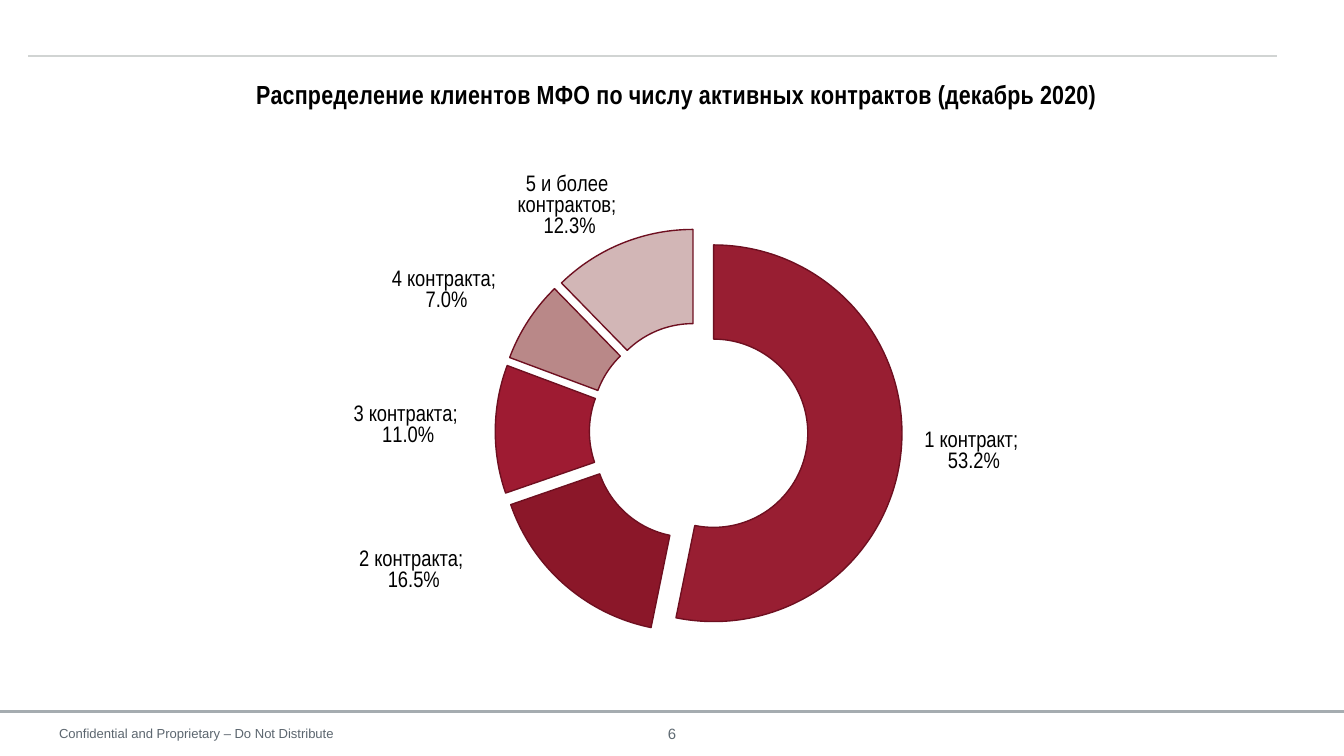
from dataclasses import dataclass

from lxml import etree
from pptx import Presentation
from pptx import util as u
from pptx.chart.data import CategoryChartData
from pptx.dml.color import RGBColor
from pptx.enum import chart as ch, shapes, text
from pptx.oxml import parse_xml
from pptx.oxml.ns import nsdecls, qn


@dataclass(frozen=True)
class Theme:
    font: str = "Arial"
    narrow: str = "Arial Narrow"
    ink: str = "000000"
    paper: str = "FFFFFF"
    footer: str = "5C666F"
    number: str = "5F6A72"
    top_rule: str = "D1D4D3"
    bottom_rule: str = "A5ACB0"
    outline: str = "6E0F20"
    title_size: float = 14
    label_size: float = 12
    number_size: float = 8
    footer_size: float = 7


T = Theme()
W = u.Inches(10)
H = W * 9 // 16

SLICES = [
    ("1 контракт", 0.532, "981E32", (0.108, 0.007)),
    ("2 контракта", 0.165, "8B1729", (-0.17, 0.037)),
    ("3 контракта", 0.11, "9E1B32", (-0.126, -0.007)),
    ("4 контракта", 0.07, "B98888", (-0.114, -0.096)),
    ("5 и более контрактов", 0.123, "D2B6B6", (-0.067, -0.139)),
]


def rgb(value):
    return RGBColor.from_string(value)


def box(left, top, width, height):
    return round(left * W), round(top * H), round(width * W), round(height * H)


def style(font, name, size, color, bold=False):
    font.name, font.size, font.bold = name, u.Pt(size), bold
    font.color.rgb = rgb(color)


def add_rule(s, x1, x2, y, color, width):
    sp = s.shapes.add_connector(
        shapes.MSO_CONNECTOR.STRAIGHT, *box(x1, y, x2, y))
    sp.line.color.rgb = rgb(color)
    sp.line.width = u.Pt(width)
    etree.SubElement(sp._element.spPr, qn("a:effectLst"))


def add_text(s, place, words, size, color, align, anchor, wrap=True):
    sp = s.shapes.add_textbox(*box(*place))
    tf = sp.text_frame
    tf.word_wrap = wrap
    tf.vertical_anchor = anchor
    tf.margin_left = tf.margin_right = tf.margin_top = tf.margin_bottom = 0
    p = tf.paragraphs[0]
    p.text = words
    p.alignment = align
    style(p.font, T.font, size, color)
    return sp


def set_layout(parent, position, x, y, extra="", modes=""):
    for old in parent.findall(qn("c:layout")):
        parent.remove(old)
    parent.insert(position, parse_xml(
        f'<c:layout {nsdecls("c")}><c:manualLayout>{modes}'
        f'<c:x val="{x}"/><c:y val="{y}"/>{extra}'
        '</c:manualLayout></c:layout>'))


EDGES = '<c:xMode val="edge"/><c:yMode val="edge"/>'


def add_labels(ser):
    labels = ser.data_labels
    labels.show_value = labels.show_category_name = True
    labels.number_format = "0.0%"
    labels.number_format_is_linked = False
    style(labels.font, T.narrow, T.label_size, T.ink)
    for i, (name, value, _, offset) in enumerate(SLICES):
        tf = ser.points[i].data_label.text_frame
        tf.text = f"{name};\n {value:.1%}"
        for p in tf.paragraphs:
            style(p.font, T.narrow, T.label_size, T.ink)
            for r in p.runs:
                style(r.font, T.narrow, T.label_size, T.ink)
        dLbl = labels._element.findall(qn("c:dLbl"))[i]
        set_layout(dLbl, 1, *offset)
        dLbl.find(qn("c:showCatName")).set("val", "1")
    for leader in labels._element.findall(qn("c:showLeaderLines")):
        leader.set("val", "0")


def add_title(chart, words):
    title = chart.chart_title
    p = title.text_frame.paragraphs[0]
    p.text = words
    style(p.font, T.narrow, T.title_size, T.ink, True)
    set_layout(title._element, 1, 0.14, 0.013, modes=EDGES)


def add_doughnut(s, place, title):
    data = CategoryChartData(number_format="0.0%")
    data.categories = [name for name, *_ in SLICES]
    data.add_series("Series 1", [value for _, value, *_ in SLICES])
    chart = s.shapes.add_chart(
        ch.XL_CHART_TYPE.DOUGHNUT, *box(*place), data).chart
    style(chart.font, T.narrow, 10, T.ink)
    chart.has_legend = False
    add_title(chart, title)

    plot = chart.plots[0]
    plot.vary_by_categories = True
    plot._element.find(qn("c:holeSize")).set("val", "50")
    set_layout(plot._element.getparent(), 0, 0.327, 0.273,
               '<c:w val="0.451"/><c:h val="0.699"/>',
               '<c:layoutTarget val="inner"/>' + EDGES)

    ser = plot.series[0]
    for i, (_, _, color, _) in enumerate(SLICES):
        fmt = ser.points[i].format
        fmt.fill.solid()
        fmt.fill.fore_color.rgb = rgb(color)
        fmt.line.color.rgb = rgb(T.outline)
        fmt.line.width = u.Pt(0.75)
    explosion = parse_xml(f'<c:explosion {nsdecls("c")} val="16"/>')
    ser._element.find(qn("c:dPt")).addprevious(explosion)
    add_labels(ser)


def main():
    prs = Presentation()
    prs.slide_width, prs.slide_height = W, H
    s = prs.slides.add_slide(prs.slide_layouts[6])
    footer = add_text(
        s, (0.044, 0.963, 0.237, 0.027),
        "Confidential and Proprietary – Do Not Distribute",
        T.footer_size, T.footer, text.PP_ALIGN.LEFT,
        text.MSO_ANCHOR.TOP, wrap=False)
    footer.fill.solid()
    footer.fill.fore_color.rgb = rgb(T.paper)
    footer.text_frame.paragraphs[0].line_spacing = 0.85
    add_rule(s, 0, 1, 0.941, T.bottom_rule, 1.5)
    add_rule(s, 0.021, 0.95, 0.074, T.top_rule, 1)
    add_text(s, (0.474, 0.957, 0.052, 0.027), "6", T.number_size, T.number,
             text.PP_ALIGN.CENTER, text.MSO_ANCHOR.MIDDLE)
    add_doughnut(
        s, (0.074, 0.092, 0.807, 0.77),
        "Распределение клиентов МФО по числу активных контрактов (декабрь 2020)")
    prs.save("out.pptx")


if __name__ == "__main__":
    main()
